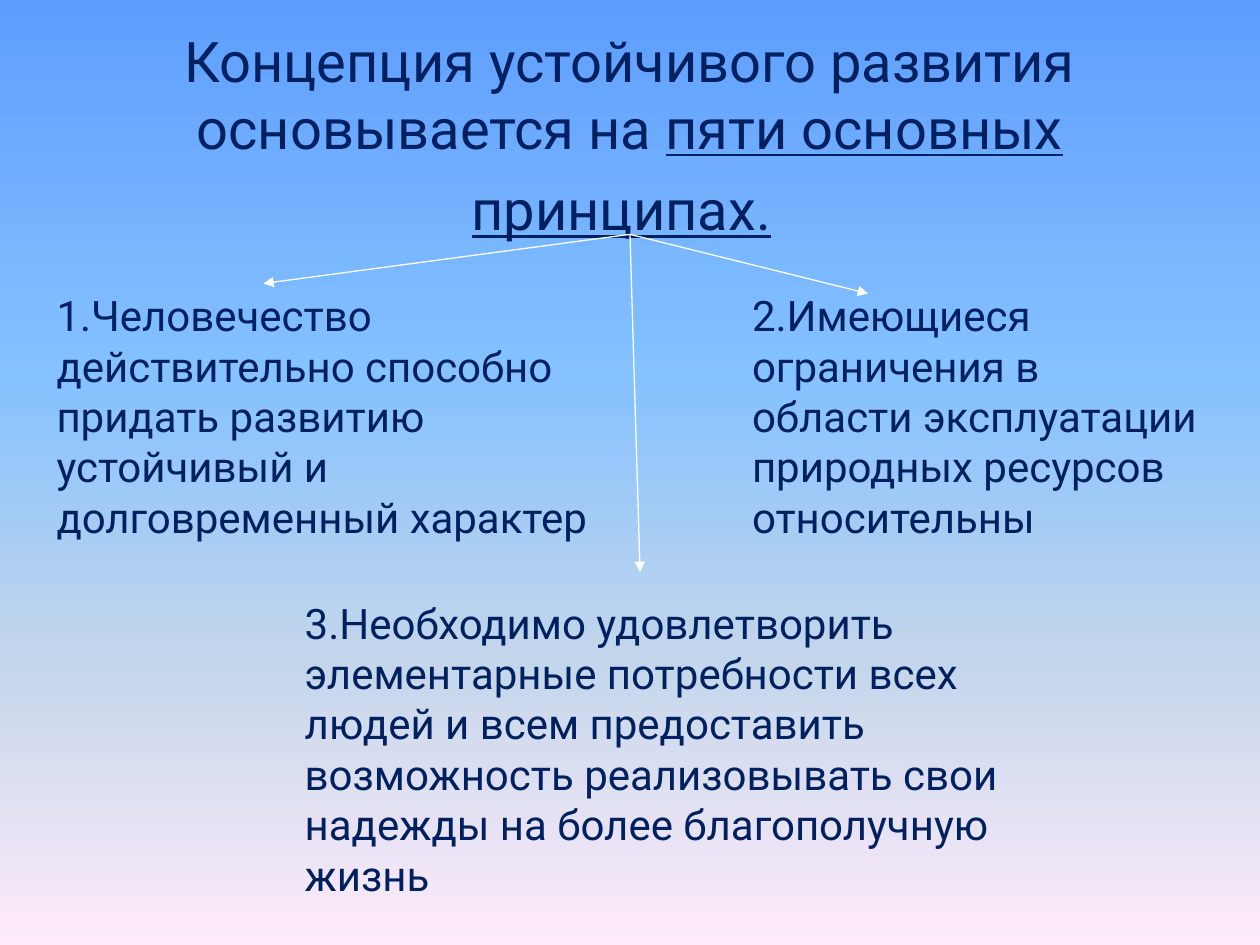
from lxml.etree import SubElement
from pptx import Presentation
from pptx.dml.color import RGBColor
from pptx.enum.shapes import MSO_CONNECTOR
from pptx.enum.text import MSO_ANCHOR, PP_ALIGN
from pptx.oxml.ns import qn
from pptx.util import Pt

SCALE = 9144
FONT = "Roboto"
COLORS = {"text": "002060", "arrow": "FFFFFF"}
SKY = [(0, "5E9EFF"), (40, "85C2FF"), (70, "C4D6EB"), (100, "FFEBFA")]
TITLE = [
    ("Концепция устойчивого развития основывается на ", 32, False),
    ("пяти основных принципах.", 32, True),
    (" ", 40, False),
]
ROOT = (500, 186)
POINTS = [
    ("1.Человечество действительно способно придать развитию устойчивый "
     "и долговременный характер", (35, 225, 472, 212), (209, 225)),
    ("2.Имеющиеся ограничения в области эксплуатации природных ресурсов "
     "относительны", (587, 225, 378, 212), (689, 233)),
    ("3.Необходимо удовлетворить элементарные потребности всех людей и всем "
     "предоставить возможность реализовывать свои надежды на более "
     "благополучную жизнь", (232, 469, 598, 252), (508, 454)),
]


def px(*sizes):
    """Turn lengths in px into EMU."""
    return [size * SCALE for size in sizes]


def style(run, size, under=False):
    """Format one run of text."""
    run.font.name = FONT
    run.font.size = Pt(size)
    run.font.underline = under
    run.font.color.rgb = RGBColor.from_string(COLORS["text"])


def paint(slide):
    """Fill the background with the vertical sky gradient."""
    fill = slide.background.fill
    fill.gradient()
    fill.gradient_angle = 270
    stops = slide.element.find(".//" + qn("a:gsLst"))
    for old in list(stops):
        stops.remove(old)
    for place, color in SKY:
        stop = SubElement(stops, qn("a:gs"), pos=str(place * 1000))
        SubElement(stop, qn("a:srgbClr"), val=color)


def head(slide, box):
    """Place the title with its underlined phrase."""
    title = slide.shapes.title
    title.left, title.top, title.width, title.height = px(*box)
    frame = title.text_frame
    frame.word_wrap = True
    frame.vertical_anchor = MSO_ANCHOR.MIDDLE
    para = frame.paragraphs[0]
    para.alignment = PP_ALIGN.CENTER
    for text, size, under in TITLE:
        run = para.add_run()
        run.text = text
        style(run, size, under)


def point(slide, text, box):
    """Place the text of one principle."""
    frame = slide.shapes.add_textbox(*px(*box)).text_frame
    frame.word_wrap = True
    frame.text = text
    style(frame.paragraphs[0].runs[0], 24)


def arrow(slide, start, end):
    """Draw an arrow between two places."""
    link = slide.shapes.add_connector(
        MSO_CONNECTOR.STRAIGHT, *px(*start, *end))
    link.line.width = Pt(0.75)
    link.line.color.rgb = RGBColor.from_string(COLORS["arrow"])
    SubElement(link.line._get_or_add_ln(), qn("a:tailEnd"), type="triangle")
    SubElement(link.element.spPr, qn("a:effectLst"))


def main():
    """Build and save the slide."""
    deck = Presentation()
    deck.slide_width, deck.slide_height = px(1000, 750)
    slide = deck.slides.add_slide(deck.slide_layouts[5])
    paint(slide)
    head(slide, (50, 32, 900, 151))
    for text, box, _ in POINTS:
        point(slide, text, box)
    for _, _, end in POINTS:
        arrow(slide, ROOT, end)
    deck.save("out.pptx")


if __name__ == "__main__":
    main()
